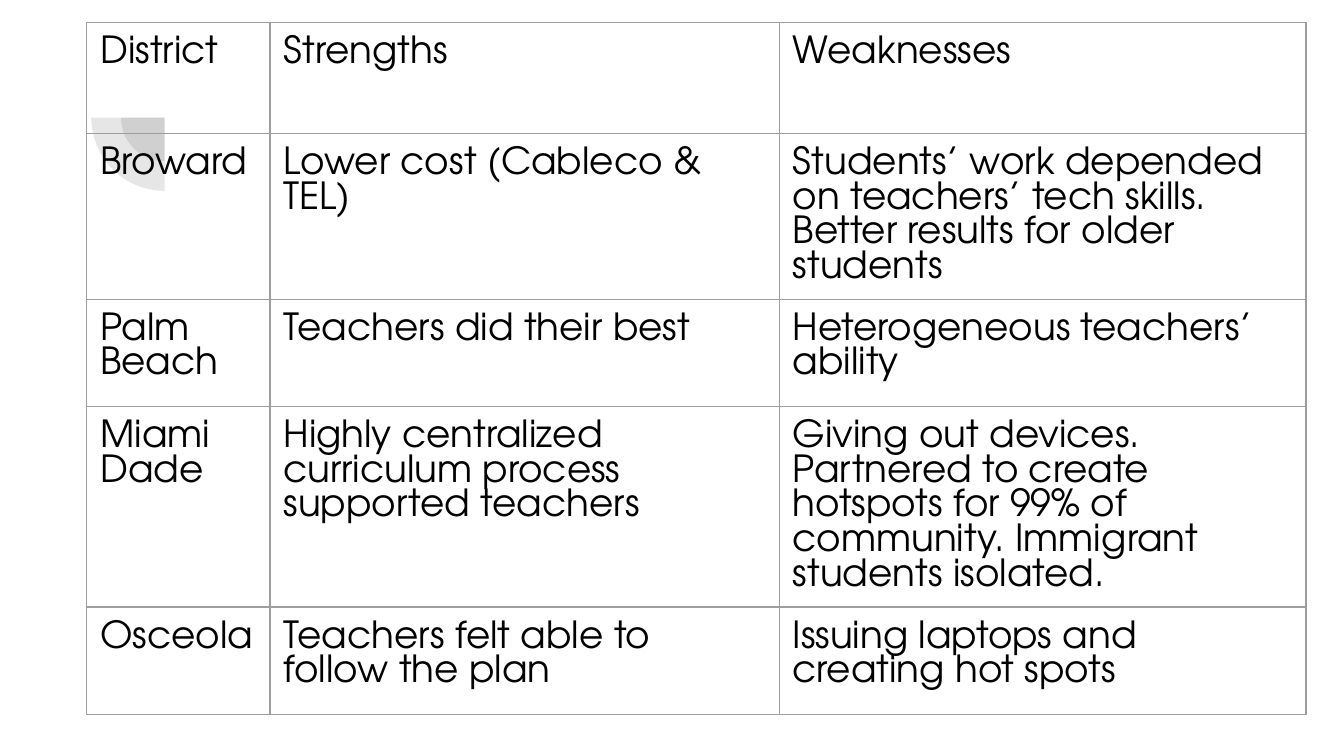
import pptx
import pptx.util
import pptx.dml.color
import pptx.enum.shapes
import pptx.oxml
import pptx.oxml.ns
from lxml import etree

Pt = pptx.util.Pt
qn = pptx.oxml.ns.qn


def color(code):
    return pptx.dml.color.RGBColor.from_string(code)


deck = pptx.Presentation()
deck.slide_width, deck.slide_height = Pt(720), Pt(405)
slide = deck.slides.add_slide(deck.slide_layouts[6])

# Two quarter circles around one centre, behind the table
mid_x, mid_y = 88.2, 63
for size in (46.8, 78.5):
    pie = slide.shapes.add_shape(
        pptx.enum.shapes.MSO_SHAPE.PIE,
        Pt(mid_x - size / 2), Pt(mid_y - size / 2), Pt(size), Pt(size))
    pie.adjustments[0], pie.adjustments[1] = 108, 162
    pie.rotation = 270
    pie.shadow.inherit = False
    pie.line.fill.background()
    pie.fill.solid()
    pie.fill.fore_color.rgb = color("424242")
    tint = pie.fill._xPr.find(".//" + qn("a:srgbClr"))
    etree.SubElement(tint, qn("a:alpha"), val="13000")

rows = [
    ("District", "Strengths", "Weaknesses"),
    ("Broward", "Lower cost (Cableco & TEL)",
     "Students’ work depended on teachers’ tech skills. "
     "Better results for older students"),
    ("Palm Beach", "Teachers did their best",
     "Heterogeneous teachers’ ability"),
    ("Miami Dade", "Highly centralized curriculum process supported teachers",
     "Giving out devices. Partnered to create hotspots for 99% of community. "
     "Immigrant students isolated."),
    ("Osceola", "Teachers felt able to follow the plan",
     "Issuing laptops and creating hot spots"),
]
widths = [98.2, 272.8, 282.2]
heights = [59.5, 73.5, 57.5, 92, 57.5]

frame = slide.shapes.add_table(
    len(rows), len(widths), Pt(46.5), Pt(12),
    Pt(sum(widths)), Pt(sum(heights)))
table = frame.table
table.first_row = table.horz_banding = False
for col, width in zip(table.columns, widths):
    col.width = Pt(width)
for row, height, texts in zip(table.rows, heights, rows):
    row.height = Pt(height)
    for cell, text in zip(row.cells, texts):
        cell.margin_left = cell.margin_right = Pt(7.2)
        cell.margin_top = cell.margin_bottom = Pt(7.2)
        cell.text_frame.text = text
        font = cell.text_frame.paragraphs[0].runs[0].font
        font.name, font.size = "TeX Gyre Adventor", Pt(20)
        font.color.rgb = color("000000")
        cell.fill.background()
        props = cell._tc.get_or_add_tcPr()
        for place, side in enumerate(("lnL", "lnR", "lnT", "lnB")):
            line = etree.Element(qn("a:" + side), w=str(Pt(0.75)))
            fill = etree.SubElement(line, qn("a:solidFill"))
            etree.SubElement(fill, qn("a:srgbClr"), val="9E9E9E")
            props.insert(place, line)

deck.save("out.pptx")
